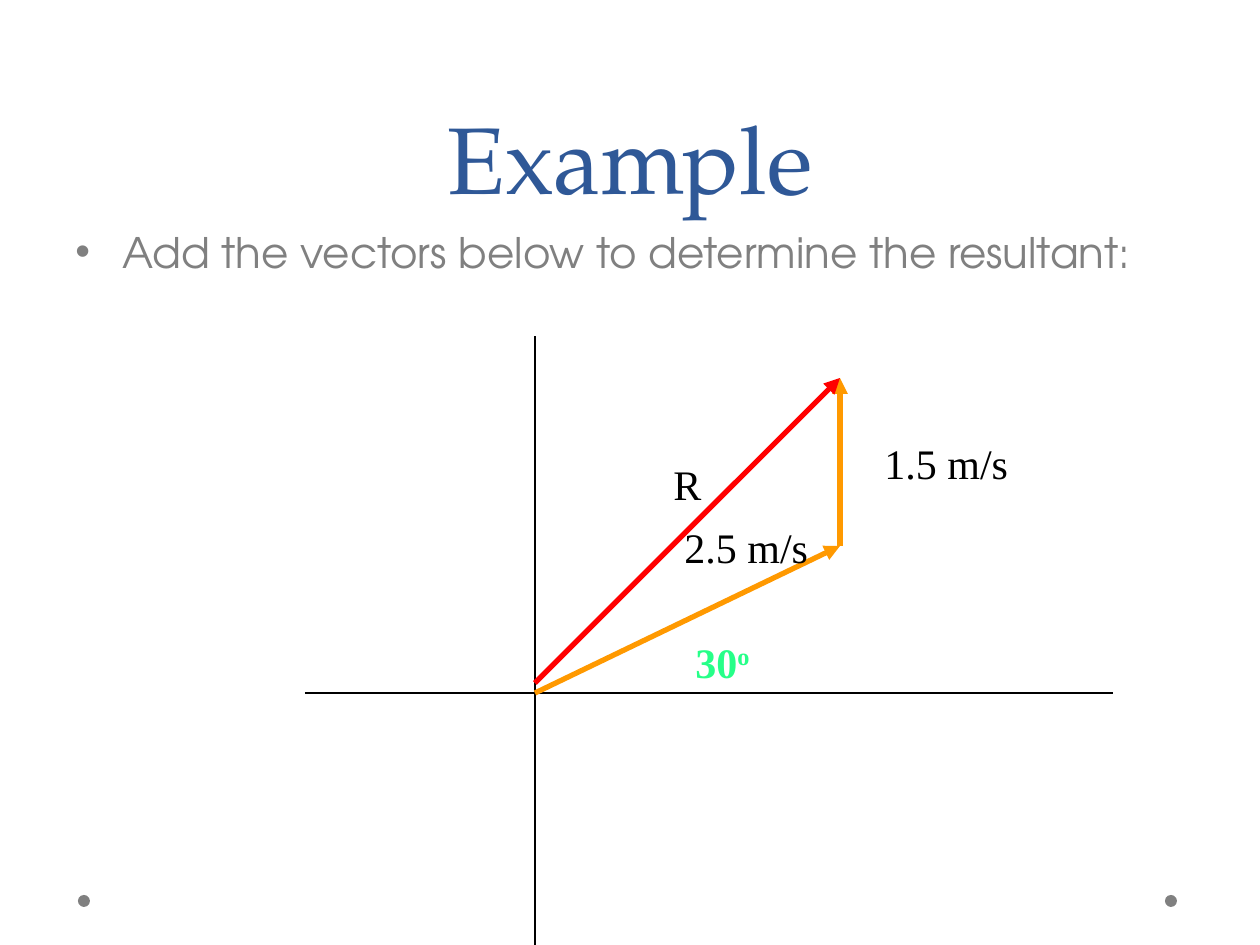
"""Build a slide that adds two velocity vectors to find their resultant."""
from lxml.etree import SubElement
from pptx import Presentation
from pptx.dml.color import RGBColor
from pptx.enum.shapes import MSO_CONNECTOR, MSO_SHAPE
from pptx.enum.text import MSO_ANCHOR, PP_ALIGN
from pptx.oxml.ns import qn
from pptx.util import Emu, Pt

EMU_PER_PX = 914400 / 126
BLACK, GRAY, BLUE = "000000", "808080", "2F5897"
ORANGE, RED, GREEN = "FF9900", "FF0000", "26FF88"
TITLE_FONT, BODY_FONT, LABEL_FONT = "TeX Gyre Pagella", "TeX Gyre Adventor", "Times New Roman"


def px(length):
    return Emu(round(length * EMU_PER_PX))


def color(value):
    return RGBColor.from_string(value)


def add_run(paragraph, text, *, font, size=24, fill=BLACK, bold=False, superscript=False):
    run = paragraph.add_run()
    run.text = text
    run.font.name = font
    run.font.size = Pt(size)
    run.font.bold = bold
    run.font.color.rgb = color(fill)
    if superscript:
        run.font._element.set("baseline", "30000")


class SlideBuilder:
    def __init__(self, slide):
        self.slide = slide
        self.label_height = 63

    def dot(self, left, top, size):
        shape = self.slide.shapes.add_shape(MSO_SHAPE.OVAL, px(left), px(top), px(size), px(size))
        shape.shadow.inherit = False
        shape.fill.solid()
        shape.fill.fore_color.rgb = color(GRAY)
        shape.line.fill.background()

    def text_box(self, left, top, width, height, anchor=MSO_ANCHOR.TOP):
        shape = self.slide.shapes.add_textbox(px(left), px(top), px(width), px(height))
        shape.text_frame.word_wrap = True
        shape.text_frame.vertical_anchor = anchor
        return shape.text_frame.paragraphs[0]

    def title(self, text):
        paragraph = self.text_box(63, 0, 1134, 220, MSO_ANCHOR.BOTTOM)
        paragraph.alignment = PP_ALIGN.CENTER
        paragraph.line_spacing = Pt(58)
        add_run(paragraph, text, font=TITLE_FONT, size=54, fill=BLUE)

    def bullet(self, text):
        paragraph = self.text_box(63, 220, 1134, 146)
        properties = paragraph._p.get_or_add_pPr()
        indent = px(47)
        properties.set("marL", str(indent))
        properties.set("indent", str(-indent))
        SubElement(properties, qn("a:buFont")).set("typeface", "Arial")
        SubElement(properties, qn("a:buChar")).set("char", "•")
        add_run(paragraph, text, font=BODY_FONT, fill=GRAY)

    def label(self, left, top, width, text, exponent="", **style):
        paragraph = self.text_box(left, top, width, self.label_height)
        add_run(paragraph, text, font=LABEL_FONT, **style)
        if exponent:
            add_run(paragraph, exponent, font=LABEL_FONT, superscript=True, **style)

    def line(self, start, end, fill=BLACK, width=0.75):
        connector = self.slide.shapes.add_connector(
            MSO_CONNECTOR.STRAIGHT, *map(px, start), *map(px, end))
        connector.line.color.rgb = color(fill)
        connector.line.width = Pt(width)
        SubElement(connector._element.spPr, qn("a:effectLst"))
        return connector

    def vector(self, start, end, fill):
        connector = self.line(start, end, fill, 3)
        SubElement(connector.line._get_or_add_ln(), qn("a:tailEnd")).set("type", "triangle")


def main():
    presentation = Presentation()
    presentation.slide_width, presentation.slide_height = px(1260), px(945)
    builder = SlideBuilder(presentation.slides.add_slide(presentation.slide_layouts[6]))

    for left in (1165, 78):
        builder.dot(left, 895, 12)
    builder.title("Example")
    builder.bullet("Add the vectors below to determine the resultant:")

    origin, corner, tip = (535, 693), (840, 546), (840, 378)
    builder.line((535, 945), (535, 336))
    builder.line((305, 693), (1113, 693))
    builder.vector(origin, corner, ORANGE)
    builder.vector(corner, tip, ORANGE)
    builder.label(683, 630, 94, "30", "o", fill=GREEN, bold=True)
    builder.label(672, 515, 231, "2.5 m/s")
    builder.label(872, 431, 231, "1.5 m/s")
    builder.vector((535, 683), tip, RED)
    builder.label(661, 452, 53, "R")

    presentation.save("out.pptx")


if __name__ == "__main__":
    main()
